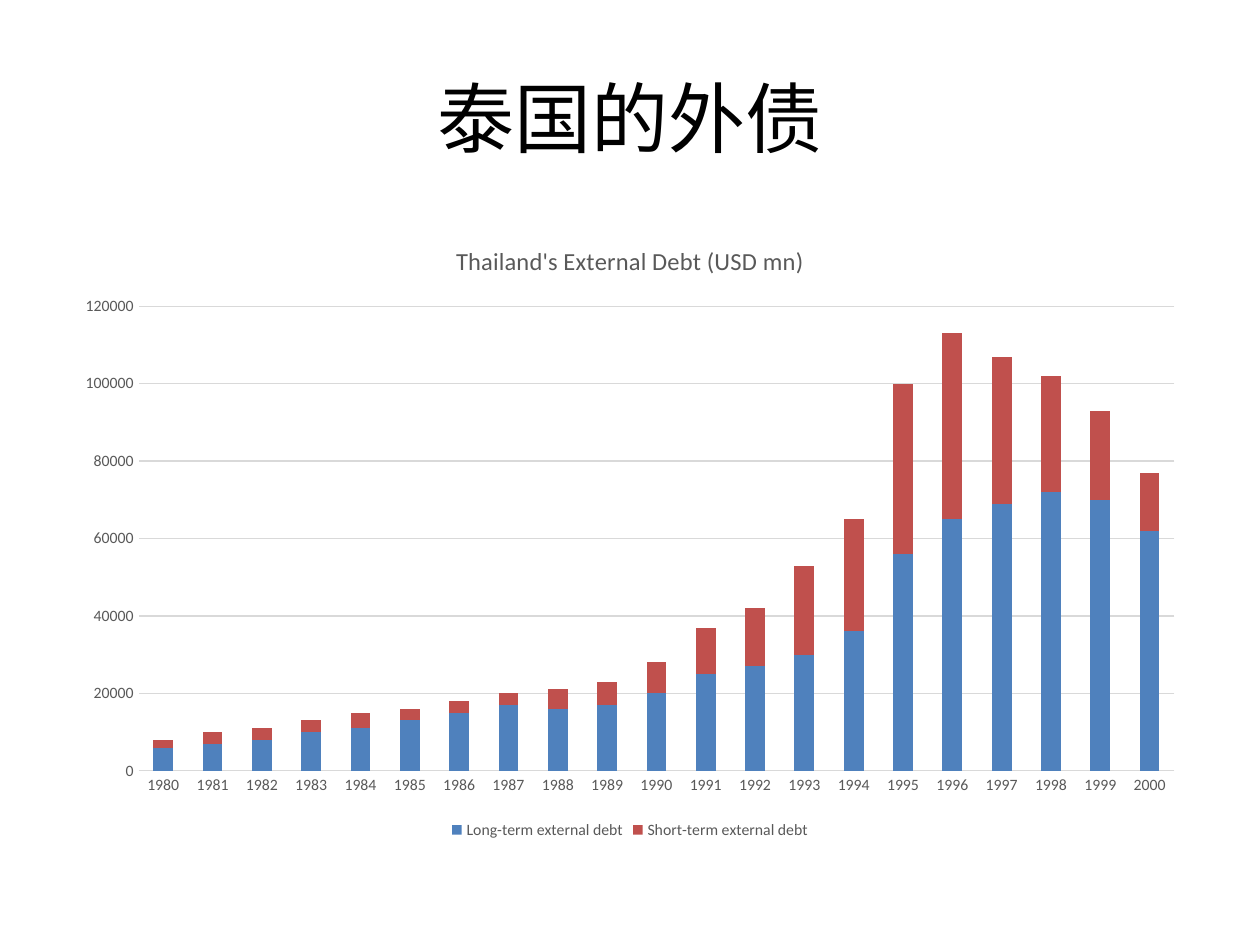
import pptx
import pptx.util
import pptx.chart.data
import pptx.dml.color
import pptx.enum.chart
import pptx.enum.text

Pt = pptx.util.Pt
RGB = pptx.dml.color.RGBColor
BLACK = RGB(0x00, 0x00, 0x00)
GREY = RGB(0x59, 0x59, 0x59)
PALE = RGB(0xD9, 0xD9, 0xD9)
BLUE = RGB(0x4F, 0x81, 0xBD)
RED = RGB(0xC0, 0x50, 0x4D)
FACE = "Calibri"


def style(font, size, color):
    font.name = FACE
    font.size = Pt(size)
    font.bold = False
    font.color.rgb = color


deck = pptx.Presentation()
deck.slide_width = pptx.util.Inches(10)
deck.slide_height = pptx.util.Inches(7.5)
wide, high = deck.slide_width, deck.slide_height
slide = deck.slides.add_slide(deck.slide_layouts[5])
left, span = int(wide * 0.05), int(wide * 0.9)

title = slide.shapes.title
title.left, title.top = left, int(high * 0.04)
title.width, title.height = span, int(high / 6)
frame = title.text_frame
frame.text = "泰国的外债"
frame.vertical_anchor = pptx.enum.text.MSO_ANCHOR.MIDDLE
head = frame.paragraphs[0]
head.alignment = pptx.enum.text.PP_ALIGN.CENTER
style(head.font, 44, BLACK)

debts = [
    ("Long-term external debt", BLUE,
     [6, 7, 8, 10, 11, 13, 15, 17, 16, 17, 20,
      25, 27, 30, 36, 56, 65, 69, 72, 70, 62]),
    ("Short-term external debt", RED,
     [2, 3, 3, 3, 4, 3, 3, 3, 5, 6, 8,
      12, 15, 23, 29, 44, 48, 38, 30, 23, 15]),
]
data = pptx.chart.data.CategoryChartData()
data.categories = [str(year) for year in range(1980, 2001)]
for name, color, sums in debts:
    data.add_series(name, [1000 * n for n in sums])

chart = slide.shapes.add_chart(
    pptx.enum.chart.XL_CHART_TYPE.COLUMN_STACKED,
    left, int(high * 0.7 / 3), span, int(high * 0.66), data).chart
style(chart.font, 10, BLACK)

chart.has_title = True
label = chart.chart_title.text_frame
label.text = "Thailand's External Debt (USD mn)"
style(label.paragraphs[0].font, 14, GREY)
chart.chart_title.include_in_layout = False

chart.has_legend = True
chart.legend.position = pptx.enum.chart.XL_LEGEND_POSITION.BOTTOM
chart.legend.include_in_layout = False
style(chart.legend.font, 9, GREY)

plot = chart.plots[0]
plot.gap_width = 150
plot.overlap = 100
plot.vary_by_categories = False
for bar, (name, color, sums) in zip(plot.series, debts):
    bar.format.fill.solid()
    bar.format.fill.fore_color.rgb = color

years, scale = chart.category_axis, chart.value_axis
for axis in (years, scale):
    axis.major_tick_mark = pptx.enum.chart.XL_TICK_MARK.NONE
    axis.minor_tick_mark = pptx.enum.chart.XL_TICK_MARK.NONE
    style(axis.tick_labels.font, 9, GREY)
scale.minimum_scale = 0
scale.maximum_scale = 120000
scale.major_unit = 20000
scale.has_major_gridlines = True
scale.format.line.fill.background()
for line in (years.format.line, scale.major_gridlines.format.line):
    line.color.rgb = PALE
    line.width = Pt(0.75)

deck.save("out.pptx")
